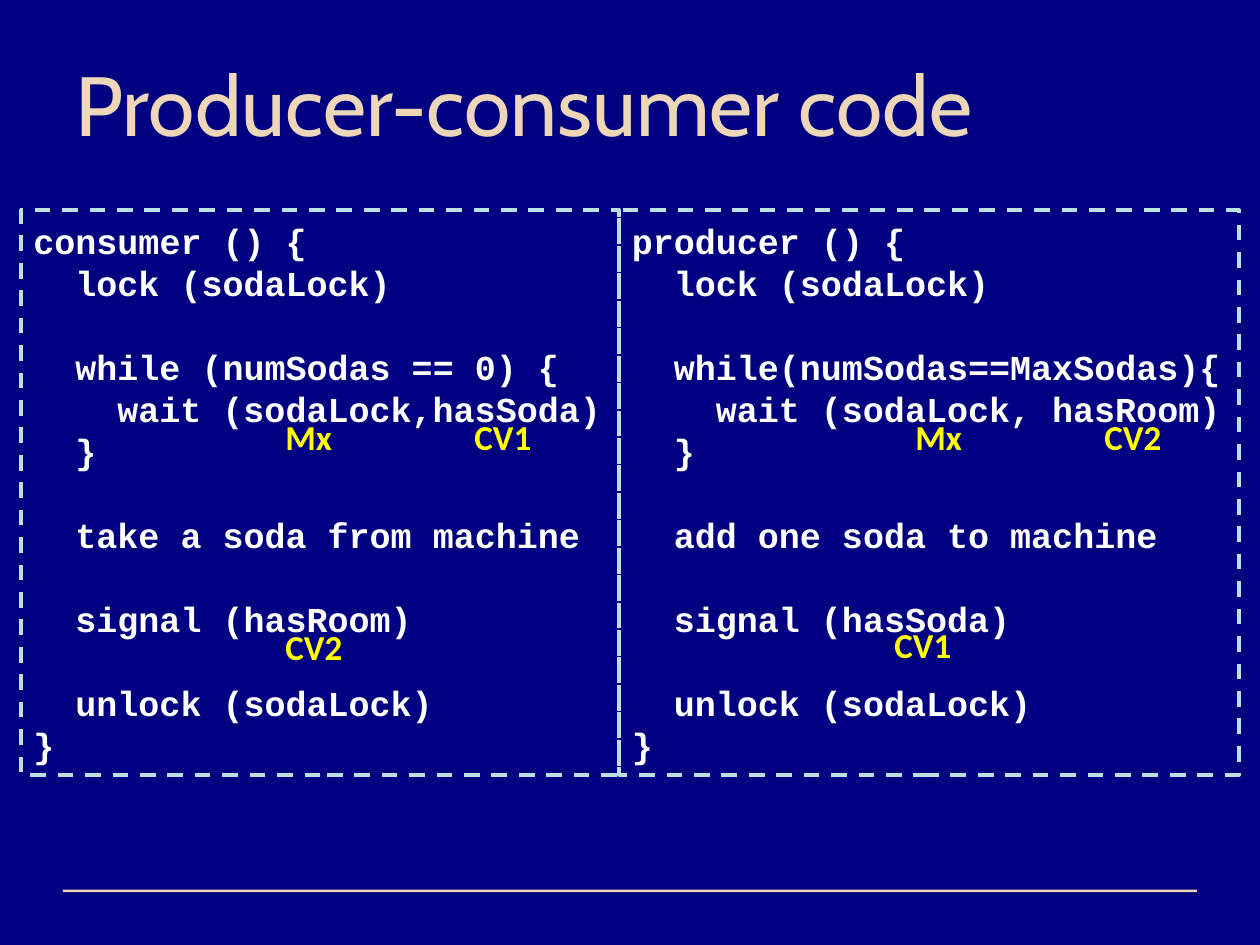
from dataclasses import dataclass

from pptx import Presentation
from pptx.dml.color import RGBColor
from pptx.enum.dml import MSO_LINE
from pptx.enum.shapes import MSO_SHAPE
from pptx.enum.text import MSO_ANCHOR, PP_ALIGN
from pptx.util import Inches, Pt

COLS, ROWS = 60, 45  # square grid cells over the whole slide


@dataclass(frozen=True)
class Theme:
    background: RGBColor = RGBColor(0x00, 0x00, 0x80)
    accent: RGBColor = RGBColor(0xEE, 0xD7, 0xB8)
    border: RGBColor = RGBColor(0xBB, 0xE0, 0xE3)
    code: RGBColor = RGBColor(0xFF, 0xFF, 0xFF)
    label: RGBColor = RGBColor(0xFF, 0xFF, 0x00)
    title_font: str = "Cabin"
    code_font: str = "Courier New"
    label_font: str = "Calibri"
    title_size: Pt = Pt(48)
    text_size: Pt = Pt(20)
    line_height: Pt = Pt(24)
    indent: int = 24  # points: two code characters
    border_width: Pt = Pt(2.25)


@dataclass(frozen=True)
class Box:
    col: float
    row: float
    cols: float
    rows: float


@dataclass(frozen=True)
class Line:
    text: str
    level: int = 1
    gap: bool = False  # one line of space above


@dataclass(frozen=True)
class Panel:
    box: Box
    lines: tuple[Line, ...]


@dataclass(frozen=True)
class Label:
    text: str
    col: float
    row: float


THEME = Theme()


def routine(name: str, condition: str, wait: str, action: str, signal: str) -> tuple[Line, ...]:
    """The locking pattern that both routines share."""
    return (
        Line(f"{name} () {{", 0),
        Line("lock (sodaLock)"),
        Line(condition, gap=True),
        Line(wait, 2),
        Line("}"),
        Line(action, gap=True),
        Line(f"signal ({signal})", gap=True),
        Line("unlock (sodaLock)", gap=True),
        Line("}", 0),
    )


PANELS = (
    Panel(Box(29.5, 10, 29.5, 26.9),
          routine("producer", "while(numSodas==MaxSodas){", "wait (sodaLock, hasRoom)",
                  "add one soda to machine", "hasSoda")),
    Panel(Box(1, 10, 28.5, 26.9),
          routine("consumer", "while (numSodas == 0) {", "wait (sodaLock,hasSoda)",
                  "take a soda from machine", "hasRoom")),
)
LABELS = (
    Label("Mx", 13, 19.5), Label("CV1", 22, 19.5),
    Label("Mx", 43, 19.5), Label("CV2", 52, 19.5),
    Label("CV1", 42, 29.4), Label("CV2", 13, 29.5),
)


def place(prs, box: Box) -> tuple[int, int, int, int]:
    """Left, top, width and height of a grid box."""
    w, h = prs.slide_width / COLS, prs.slide_height / ROWS
    return round(box.col * w), round(box.row * h), round(box.cols * w), round(box.rows * h)


def add_run(p, text: str, font: str, size: Pt, color: RGBColor, bold: bool = True) -> None:
    r = p.add_run()
    r.text = text
    r.font.name, r.font.size, r.font.bold = font, size, bold
    r.font.color.rgb = color


def add_title(prs, s, text: str) -> None:
    sp = s.shapes.title
    sp.left, sp.top, sp.width, sp.height = place(prs, Box(3, 1.8, 54, 6.2))
    sp.text_frame.vertical_anchor = MSO_ANCHOR.MIDDLE
    p = sp.text_frame.paragraphs[0]
    p.alignment = PP_ALIGN.LEFT
    add_run(p, text, THEME.title_font, THEME.title_size, THEME.accent, bold=False)


def add_rule(prs, s) -> None:
    sp = s.shapes.add_shape(MSO_SHAPE.RECTANGLE, *place(prs, Box(3, 42.36, 54, 0.12)))
    sp.shadow.inherit = False
    sp.fill.solid()
    sp.fill.fore_color.rgb = THEME.accent
    sp.line.fill.background()


def add_panel(prs, s, panel: Panel) -> None:
    sp = s.shapes.add_shape(MSO_SHAPE.RECTANGLE, *place(prs, panel.box))
    sp.shadow.inherit = False
    sp.fill.background()
    sp.line.color.rgb = THEME.border
    sp.line.width = THEME.border_width
    sp.line.dash_style = MSO_LINE.DASH
    tf = sp.text_frame
    tf.word_wrap = False
    tf.vertical_anchor = MSO_ANCHOR.MIDDLE
    for i, line in enumerate(panel.lines):
        p = tf.add_paragraph() if i else tf.paragraphs[0]
        p.alignment = PP_ALIGN.LEFT
        p.line_spacing = THEME.line_height
        p.space_before = THEME.line_height if line.gap else Pt(0)
        p._p.get_or_add_pPr().set("marL", str(Pt(line.level * THEME.indent)))
        add_run(p, line.text, THEME.code_font, THEME.text_size, THEME.code)


def add_label(prs, s, label: Label) -> None:
    sp = s.shapes.add_textbox(*place(prs, Box(label.col, label.row, 4, 2.64)))
    tf = sp.text_frame
    tf.word_wrap = True
    tf.margin_right = Inches(0)
    add_run(tf.paragraphs[0], label.text, THEME.label_font, THEME.text_size, THEME.label)


def main() -> None:
    prs = Presentation()
    prs.slide_width, prs.slide_height = Inches(10), Inches(7.5)
    s = prs.slides.add_slide(prs.slide_layouts[5])
    s.background.fill.solid()
    s.background.fill.fore_color.rgb = THEME.background
    add_rule(prs, s)
    add_title(prs, s, "Producer-consumer code")
    for panel in PANELS:
        add_panel(prs, s, panel)
    for label in LABELS:
        add_label(prs, s, label)
    prs.save("out.pptx")


if __name__ == "__main__":
    main()
